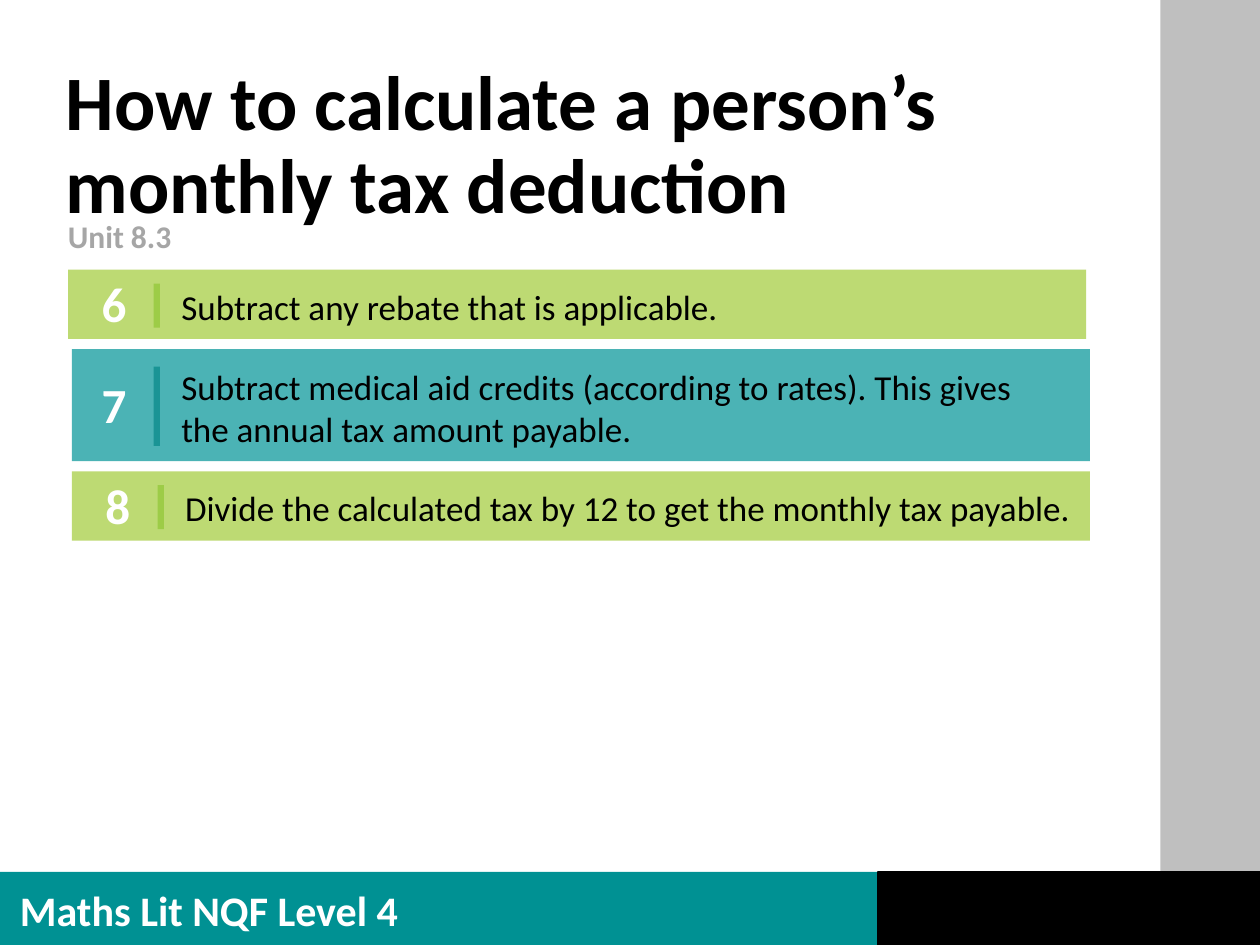
from pptx import Presentation
from pptx.dml.color import RGBColor
from pptx.enum.shapes import MSO_SHAPE
from pptx.enum.text import MSO_ANCHOR, PP_ALIGN
from pptx.util import Inches, Pt

RECTANGLE = MSO_SHAPE.RECTANGLE
TOP = MSO_ANCHOR.TOP
LEFT, CENTER = PP_ALIGN.LEFT, PP_ALIGN.CENTER
FONT = "Calibri"
BLACK, WHITE, GRAY, TEAL = "000000", "FFFFFF", "BFBFBF", "009193"
GREEN_ROW = ("BDDA73", "9DCC47")
TEAL_ROW = ("4BB3B5", "1A9495")
ROW_GAP = 0.08
STEPS = [
    ("6", "Subtract any rebate that is applicable.",
     GREEN_ROW, 0.54, 0.57, 0.55, 0.35, 6.81, 0.44),
    ("7", "Subtract medical aid credits (according to rates). This gives "
     "the annual tax amount payable.",
     TEAL_ROW, 0.57, 0.57, 0.89, 0.63, 7.09, 0.77),
    ("8", "Divide the calculated tax by 12 to get the monthly tax payable.",
     GREEN_ROW, 0.57, 0.60, 0.55, 0.35, 7.25, 0.44),
]


def color(value):
    """Turn a hex string into a colour."""
    return RGBColor.from_string(value)


def add_rectangle(page, left, top, width, height, fill):
    """Add a plain filled rectangle without an outline."""
    shape = page.shapes.add_shape(
        RECTANGLE, Inches(left), Inches(top), Inches(width), Inches(height))
    shape.shadow.inherit = False
    shape.fill.solid()
    shape.fill.fore_color.rgb = color(fill)
    shape.line.fill.background()
    return shape


def write(box, text, size, fill, bold=False, align=LEFT):
    """Write one formatted paragraph into a box."""
    frame = box.text_frame
    frame.word_wrap = True
    frame.vertical_anchor = TOP
    para = frame.paragraphs[0]
    para.alignment = align
    span = para.add_run()
    span.text = text
    span.font.name = FONT
    span.font.size = Pt(size)
    span.font.bold = bold
    span.font.color.rgb = color(fill)
    return para


def add_text(page, left, top, width, height, *content, **style):
    """Add a text box holding one paragraph."""
    box = page.shapes.add_textbox(
        Inches(left), Inches(top), Inches(width), Inches(height))
    return write(box, *content, **style)


def add_frame(page):
    """Draw the side band and the footer."""
    add_rectangle(page, 9.21, 0, 0.79, 7.49, GRAY)
    add_rectangle(page, 0, 6.92, 10, 0.58, TEAL)
    block = add_rectangle(page, 6.97, 6.92, 3.03, 0.58, BLACK)
    block.line.color.rgb = color(BLACK)
    block.line.width = Pt(1)
    add_text(page, 0.06, 6.97, 3.75, 0.5, "Maths Lit NQF Level 4", 24, WHITE, bold=True)


def add_heading(page, left, top, width, height):
    """Place the title and the unit line below it."""
    title = page.shapes.title
    title.left, title.top = Inches(left), Inches(top)
    title.width, title.height = Inches(width), Inches(height)
    para = write(title, "How to calculate a person’s monthly tax deduction",
                 44, BLACK, bold=True)
    para.line_spacing = 0.9
    unit = add_text(page, left + 0.02, top + 1.25, width, 0.33,
                    "Unit 8.3", 18, "A6A6A6", bold=True)
    unit.line_spacing = 0.9


def add_step(page, top, step):
    """Draw one numbered step, its parts centred on the row."""
    (number, text, (fill, accent), left, inner_left, height,
     divider_height, text_width, text_height) = step
    middle = top + height / 2
    add_rectangle(page, left, top, 8.08, height, fill)
    add_text(page, inner_left, middle - 0.29, 0.67, 0.57,
             number, 28, WHITE, bold=True, align=CENTER)
    add_text(page, inner_left + 0.77, middle + 0.02 - text_height / 2,
             text_width, text_height, text, 20, BLACK)
    add_rectangle(page, inner_left + 0.65, middle + 0.01 - divider_height / 2,
                  0.05, divider_height, accent)


def add_steps(page, top):
    """Stack the steps with equal gaps."""
    for step in STEPS:
        add_step(page, top, step)
        top += step[5] + ROW_GAP


def main():
    """Build and save the slide."""
    deck = Presentation()
    deck.slide_width, deck.slide_height = Inches(10), Inches(7.5)
    page = deck.slides.add_slide(deck.slide_layouts[5])
    add_frame(page)
    add_heading(page, 0.42, 0.46, 8.65, 0.79)
    add_steps(page, 2.14)
    deck.save("out.pptx")


if __name__ == "__main__":
    main()
